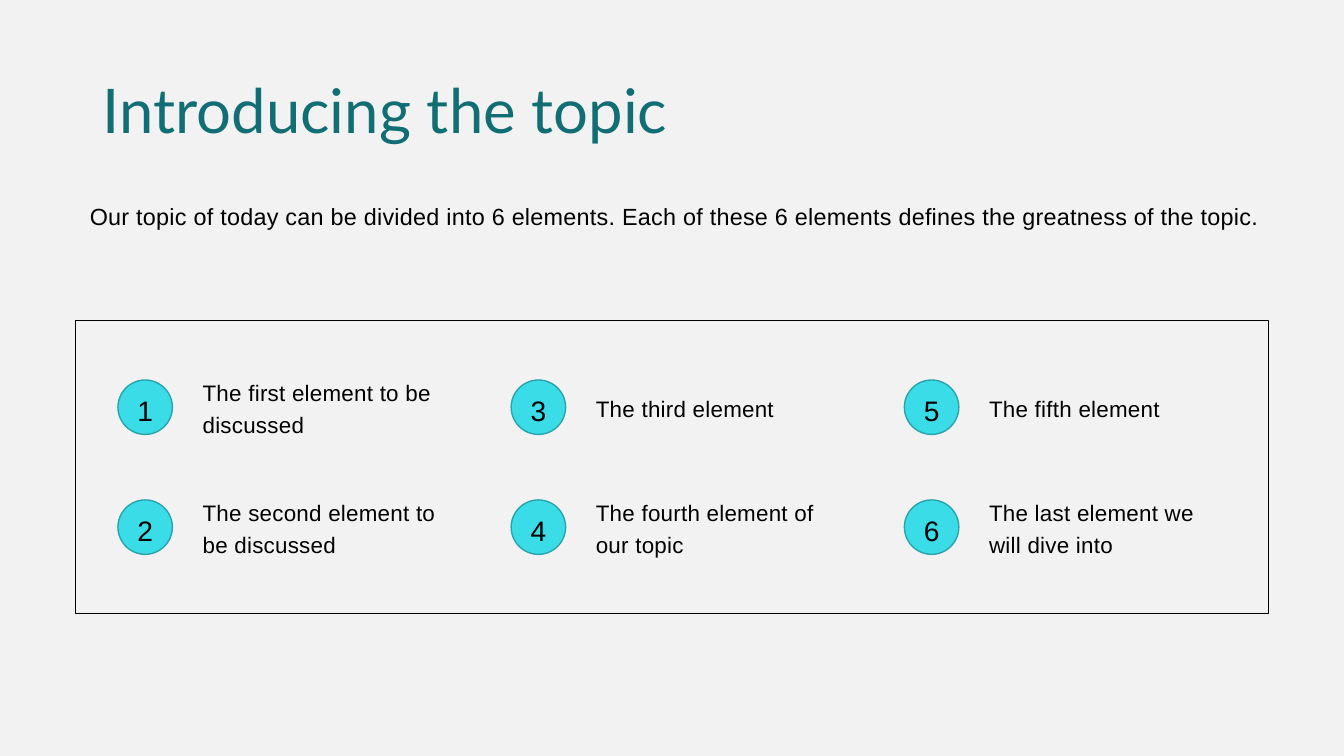
from dataclasses import dataclass

from pptx import Presentation
from pptx.dml.color import RGBColor
from pptx.enum.shapes import MSO_SHAPE as Shape
from pptx.enum.text import MSO_ANCHOR as Anchor, MSO_AUTO_SIZE as AutoSize, PP_ALIGN as Align
from pptx.util import Inches, Pt

# Content
TITLE = "Introducing the topic"
INTRO = ("Our topic of today can be divided into 6 elements. "
         "Each of these 6 elements defines the greatness of the topic.")
ELEMENTS = [
    "The first element to be discussed",
    "The second element to be discussed",
    "The third element",
    "The fourth element of our topic",
    "The fifth element",
    "The last element we will dive into",
]


@dataclass(frozen=True)
class Theme:
    background: RGBColor = RGBColor(0xF2, 0xF2, 0xF2)
    heading: RGBColor = RGBColor(0x11, 0x6E, 0x75)
    text: RGBColor = RGBColor(0, 0, 0)
    badge: RGBColor = RGBColor(0x3A, 0xDC, 0xE8)
    badge_line: RGBColor = RGBColor(0x2B, 0xA3, 0xAC)
    heading_font: str = "Lato"
    body_font: str = "Arial"
    title_size: float = 44
    intro_size: float = 16.7
    label_size: float = 16
    number_size: float = 20.1


THEME = Theme()

# Layout, in inches
ROWS = 2
BADGE_LEFT, BADGE_TOP, BADGE_SIZE = 1.17, 3.77, 0.54
COLUMN_STEP, ROW_STEP = 3.9, 1.19
LABEL_SHIFT_X, LABEL_SHIFT_Y = 0.84, -0.07
LABEL_WIDTH, LABEL_HEIGHT = 2.36, 0.65
BODY_LEADING, NUMBER_LEADING = Pt(23.3), Pt(28.1)


def write(shape, text, *, size, color=THEME.text, font=THEME.body_font, align=Align.LEFT,
          anchor=Anchor.TOP, leading=BODY_LEADING, spacing=0, margin=0):
    """Fill a shape with one formatted paragraph; spacing is in points."""
    frame = shape.text_frame
    frame.word_wrap = True
    frame.auto_size = AutoSize.NONE
    frame.vertical_anchor = anchor
    frame.margin_left = frame.margin_right = Inches(margin)
    frame.margin_top = frame.margin_bottom = Inches(margin / 2)
    paragraph = frame.paragraphs[0]
    paragraph.alignment = align
    paragraph.line_spacing = leading
    run = paragraph.add_run()
    run.text = text
    run.font.name = font
    run.font.size = Pt(size)
    run.font.color.rgb = color
    if spacing:
        run._r.get_or_add_rPr().set("spc", str(round(spacing * 100)))


def add_shape(slide, kind, box, line, width):
    shape = slide.shapes.add_shape(kind, *map(Inches, box))
    shape.shadow.inherit = False
    shape.line.color.rgb = line
    shape.line.width = Pt(width)
    return shape


def add_element(slide, index, label):
    """Place a numbered badge and its label, column by column."""
    column, row = divmod(index, ROWS)
    left = BADGE_LEFT + column * COLUMN_STEP
    top = BADGE_TOP + row * ROW_STEP

    badge = add_shape(slide, Shape.OVAL, (left, top, BADGE_SIZE, BADGE_SIZE),
                      THEME.badge_line, 1)
    badge.fill.solid()
    badge.fill.fore_color.rgb = THEME.badge
    write(badge, str(index + 1), size=THEME.number_size, align=Align.CENTER,
          anchor=Anchor.MIDDLE, leading=NUMBER_LEADING)

    label_box = slide.shapes.add_textbox(
        Inches(left + LABEL_SHIFT_X), Inches(top + LABEL_SHIFT_Y),
        Inches(LABEL_WIDTH), Inches(LABEL_HEIGHT))
    write(label_box, label, size=THEME.label_size, anchor=Anchor.MIDDLE, spacing=0.2)


def main():
    presentation = Presentation()
    presentation.slide_width = Inches(13.33)
    presentation.slide_height = Inches(7.5)
    slide = presentation.slides.add_slide(presentation.slide_layouts[5])
    slide.background.fill.solid()
    slide.background.fill.fore_color.rgb = THEME.background

    # Title
    title = slide.shapes.title
    title.left, title.top = Inches(0.92), Inches(0.4)
    title.width, title.height = Inches(11.5), Inches(1.45)
    write(title, TITLE, size=THEME.title_size, color=THEME.heading, font=THEME.heading_font,
          anchor=Anchor.MIDDLE, leading=0.9, margin=0.1)

    # Introduction
    intro = slide.shapes.add_textbox(Inches(0.89), Inches(1.96), Inches(11.69), Inches(0.62))
    write(intro, INTRO, size=THEME.intro_size, spacing=0.2)

    # Frame and elements
    frame = add_shape(slide, Shape.RECTANGLE, (0.75, 3.18, 11.83, 2.91), THEME.text, 0.5)
    frame.fill.background()
    for index, label in enumerate(ELEMENTS):
        add_element(slide, index, label)

    presentation.save("out.pptx")


if __name__ == "__main__":
    main()
